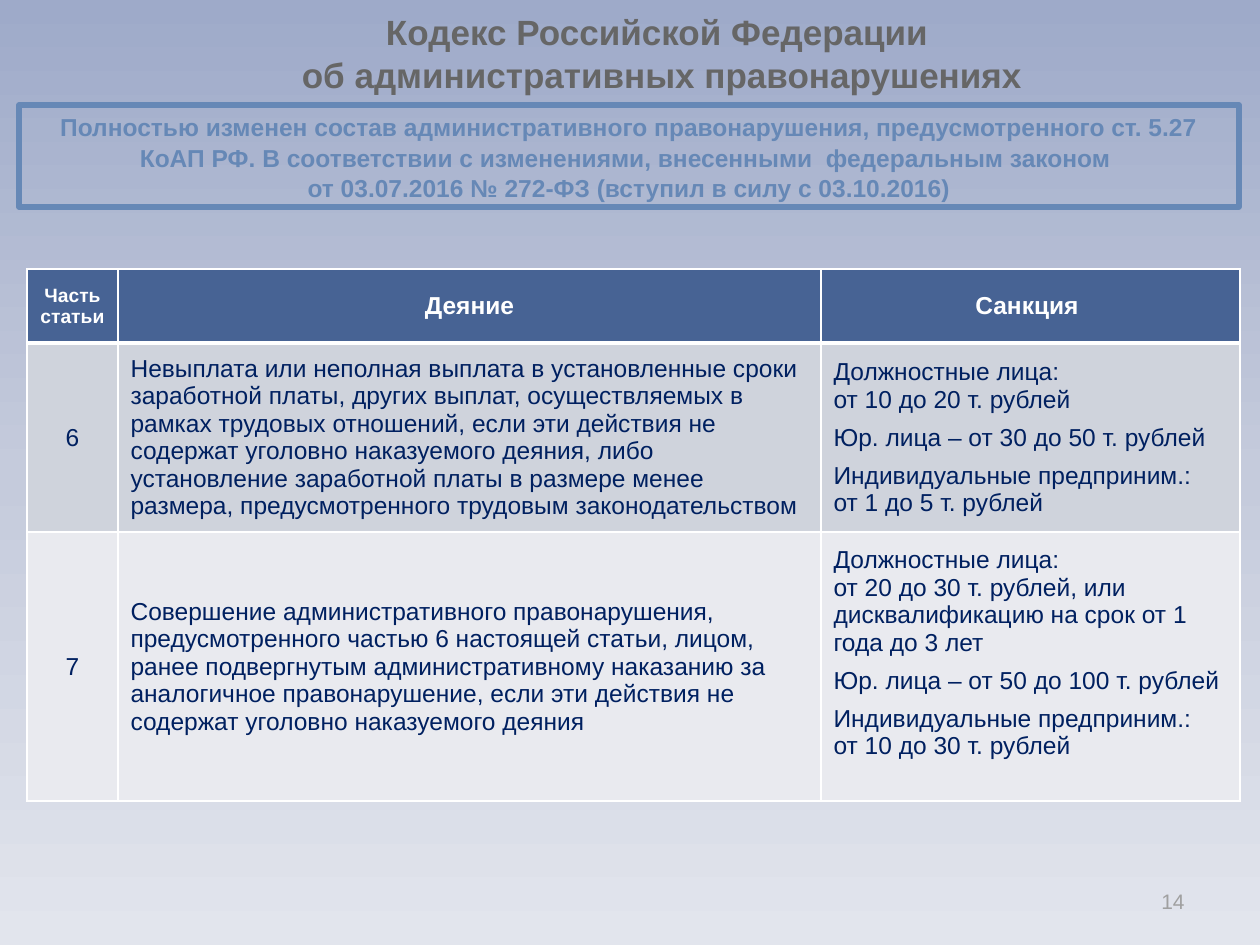
"""Build a slide on the sanctions of article 5.27 of the administrative code."""
from copy import deepcopy
from dataclasses import dataclass
from typing import Any

import pptx
import pptx.dml.color
import pptx.enum.shapes
import pptx.enum.text
import pptx.oxml
import pptx.oxml.ns
import pptx.util

EMU_PER_PX = 914400 / 126
ALIGN = pptx.enum.text.PP_ALIGN
ANCHOR = pptx.enum.text.MSO_ANCHOR


@dataclass(frozen=True)
class Theme:
    font: str = "Arial"
    title: str = "666666"
    accent: str = "6688B6"
    header: str = "476394"
    body: str = "002060"
    number: str = "A0A0A0"
    white: str = "FFFFFF"
    bands: tuple[str, ...] = ("CFD3DC", "E9EAEF")
    backdrop: tuple[str, ...] = ("9EAAC9", "C5CBDC", "E2E5ED")
    title_size: int = 20
    text_size: int = 14
    number_size: int = 12
    small_size: int = 11
    thin: int = 1
    thick: int = 3


@dataclass(frozen=True)
class Box:
    left: int
    top: int
    width: int
    height: int

    def emu(self) -> tuple[int, ...]:
        """Return the box in EMU."""
        return tuple(px(n) for n in (self.left, self.top, self.width, self.height))


@dataclass(frozen=True)
class Style:
    size: int
    color: str
    bold: bool = False
    align: Any = ALIGN.LEFT
    space_after: int = 0
    line_spacing: float = 1.0


@dataclass(frozen=True)
class Offence:
    clause: str
    act: str
    sanctions: tuple[str, ...]
    height: int
    bottom_margin: int


THEME = Theme()
HEADING_STYLE = Style(THEME.title_size, THEME.title, True, ALIGN.CENTER, 0, 1.04)
NOTICE_STYLE = Style(THEME.text_size, THEME.accent, True, ALIGN.CENTER, 0, 1.04)
NUMBER_STYLE = Style(THEME.number_size, THEME.number, align=ALIGN.RIGHT)
CLAUSE_STYLE = Style(THEME.text_size, THEME.body, align=ALIGN.CENTER)
ACT_STYLE = Style(THEME.text_size, THEME.body)
SANCTION_STYLE = Style(THEME.text_size, THEME.body, space_after=6)

HEADING = "Кодекс Российской Федерации \nоб административных правонарушениях"
NOTICE = (
    "Полностью изменен состав административного правонарушения, предусмотренного ст. 5.27 "
    "КоАП РФ. В соответствии с изменениями, внесенными  федеральным законом \n"
    "от 03.07.2016 № 272-ФЗ (вступил в силу с 03.10.2016)"
)
HEADERS = (
    ("Часть статьи", THEME.small_size),
    ("Деяние", THEME.text_size),
    ("Санкция ", THEME.text_size),
)
COLUMN_WIDTHS = (91, 703, 419)
HEADER_HEIGHT = 74
OFFENCES = (
    Offence(
        "6",
        "Невыплата или неполная выплата в установленные сроки заработной платы, других выплат, "
        "осуществляемых в рамках трудовых отношений, если эти действия не содержат уголовно "
        "наказуемого деяния, либо установление заработной платы в размере менее размера, "
        "предусмотренного трудовым законодательством",
        (
            "Должностные лица: \nот 10 до 20 т. рублей",
            "Юр. лица – от 30 до 50 т. рублей",
            "Индивидуальные предприним.: \nот 1 до 5 т. рублей",
        ),
        189,
        6,
    ),
    Offence(
        "7",
        "Совершение административного правонарушения, предусмотренного частью 6 настоящей "
        "статьи, лицом, ранее подвергнутым административному наказанию за аналогичное "
        "правонарушение, если эти действия не содержат уголовно наказуемого деяния",
        (
            "Должностные лица: \nот 20 до 30 т. рублей, или дисквалификацию на срок от 1 года до 3 лет",
            "Юр. лица – от 50 до 100 т. рублей",
            "Индивидуальные предприним.: \nот 10 до 30 т. рублей",
        ),
        269,
        33,
    ),
)


def px(length: int) -> int:
    """Turn pixels into EMU."""
    return round(length * EMU_PER_PX)


def rgb(color: str) -> pptx.dml.color.RGBColor:
    """Turn a hex string into a colour."""
    return pptx.dml.color.RGBColor.from_string(color)


def write(frame: Any, texts: tuple[str, ...], style: Style, anchor: Any = ANCHOR.MIDDLE) -> None:
    """Write each text as a paragraph, with a run for each of its lines."""
    frame.word_wrap = True
    frame.vertical_anchor = anchor
    for index, text in enumerate(texts):
        paragraph = frame.add_paragraph() if index else frame.paragraphs[0]
        paragraph.alignment = style.align
        paragraph.line_spacing = style.line_spacing
        paragraph.space_after = pptx.util.Pt(style.space_after if index < len(texts) - 1 else 0)
        for number, line in enumerate(text.split("\n")):
            if number:
                paragraph.add_line_break()
            run = paragraph.add_run()
            run.text = line
            run.font.name = THEME.font
            run.font.size = pptx.util.Pt(style.size)
            run.font.bold = style.bold
            run.font.color.rgb = rgb(style.color)


def paint_background(slide: Any) -> None:
    """Fill the slide with a vertical gradient of evenly spaced colours."""
    fill = slide.background.fill
    fill.gradient()
    fill.gradient_angle = 270
    stops = next(slide.element.iter(pptx.oxml.ns.qn("a:gsLst")))
    stops.insert(1, deepcopy(stops[0]))
    for index, (stop, color) in enumerate(zip(fill.gradient_stops, THEME.backdrop)):
        stop.position = index / (len(THEME.backdrop) - 1)
        stop.color.rgb = rgb(color)


def paint_cell(cell: Any, color: str, row: int) -> None:
    """Fill a cell and rule its sides, with a thick line under the header."""
    properties = cell._tc.get_or_add_tcPr()
    thick_side = {0: "B", 1: "T"}.get(row)
    for side in "LRTB":
        points = THEME.thick if side == thick_side else THEME.thin
        properties.append(pptx.oxml.parse_xml(
            f'<a:ln{side} {pptx.oxml.ns.nsdecls("a")} w="{pptx.util.Pt(points)}">'
            f'<a:solidFill><a:srgbClr val="{THEME.white}"/></a:solidFill></a:ln{side}>'
        ))
    cell.fill.solid()
    cell.fill.fore_color.rgb = rgb(color)


def add_text(slide: Any, box: Box, text: str, style: Style) -> None:
    """Add a text box."""
    write(slide.shapes.add_textbox(*box.emu()).text_frame, (text,), style)


def add_notice(slide: Any, box: Box) -> None:
    """Add the outlined notice."""
    shape = slide.shapes.add_shape(pptx.enum.shapes.MSO_SHAPE.RECTANGLE, *box.emu())
    shape.shadow.inherit = False
    shape.fill.background()
    shape.line.color.rgb = rgb(THEME.accent)
    shape.line.width = pptx.util.Pt(THEME.thick)
    write(shape.text_frame, (NOTICE,), NOTICE_STYLE, ANCHOR.TOP)


def fill_cell(cell: Any, texts: tuple[str, ...], style: Style, color: str, row: int) -> None:
    """Paint a cell and write its texts."""
    paint_cell(cell, color, row)
    write(cell.text_frame, texts, style)
    cell.vertical_anchor = ANCHOR.MIDDLE


def add_offences(slide: Any, left: int, top: int) -> None:
    """Add the table of offences and sanctions."""
    heights = (HEADER_HEIGHT, *(offence.height for offence in OFFENCES))
    box = Box(left, top, sum(COLUMN_WIDTHS), sum(heights))
    table = slide.shapes.add_table(len(heights), len(COLUMN_WIDTHS), *box.emu()).table
    for column, width in zip(table.columns, COLUMN_WIDTHS):
        column.width = px(width)
    for row, height in zip(table.rows, heights):
        row.height = px(height)
    for index, (text, size) in enumerate(HEADERS):
        style = Style(size, THEME.white, True, ALIGN.CENTER)
        fill_cell(table.cell(0, index), (text,), style, THEME.header, 0)
    for row, (offence, band) in enumerate(zip(OFFENCES, THEME.bands), 1):
        fill_cell(table.cell(row, 0), (offence.clause,), CLAUSE_STYLE, band, row)
        fill_cell(table.cell(row, 1), (offence.act,), ACT_STYLE, band, row)
        fill_cell(table.cell(row, 2), offence.sanctions, SANCTION_STYLE, band, row)
        table.cell(row, 2).margin_bottom = px(offence.bottom_margin)


def main() -> None:
    """Build and save the presentation."""
    presentation = pptx.Presentation()
    presentation.slide_width, presentation.slide_height = px(1260), px(945)
    slide = presentation.slides.add_slide(presentation.slide_layouts[6])
    paint_background(slide)
    add_text(slide, Box(145, -1, 1034, 106), HEADING, HEADING_STYLE)
    add_notice(slide, Box(19, 105, 1220, 102))
    add_offences(slide, 27, 269)
    add_text(slide, Box(903, 876, 294, 50), "14", NUMBER_STYLE)
    presentation.save("out.pptx")


if __name__ == "__main__":
    main()
